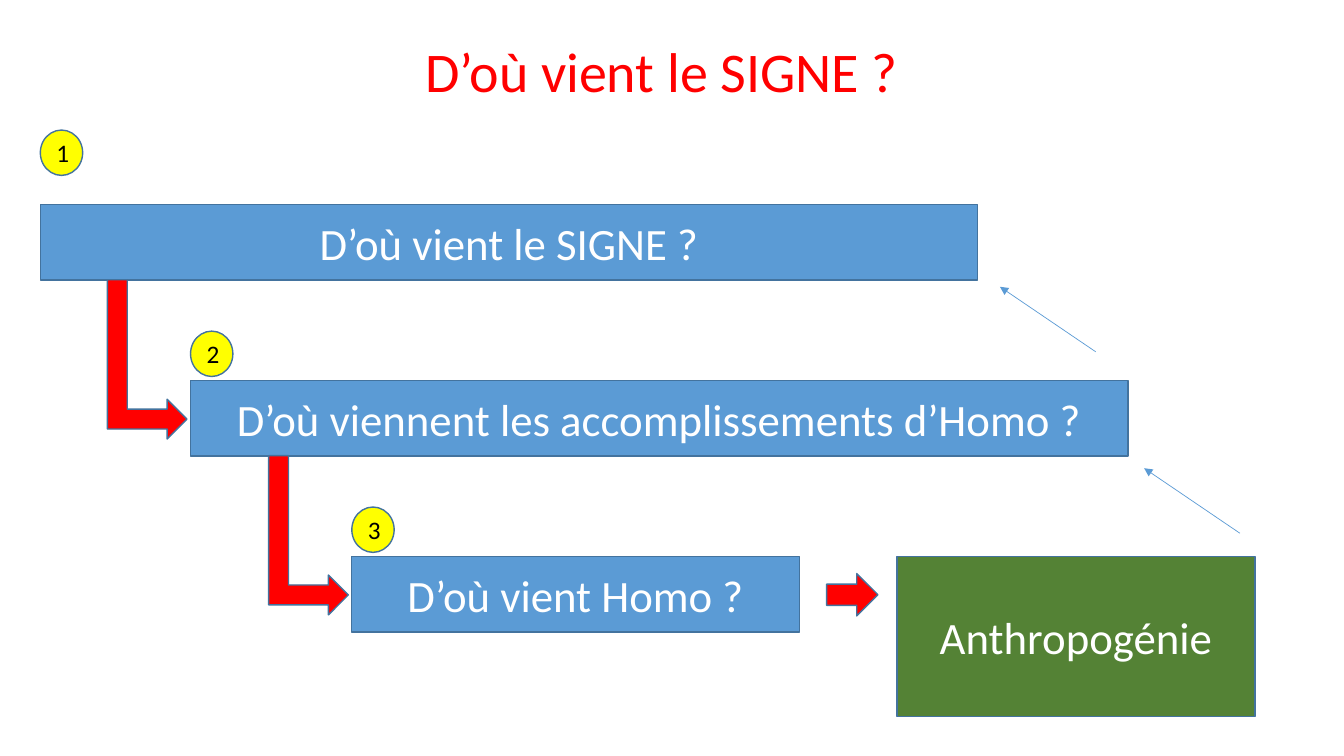
import dataclasses

import pptx
import pptx.dml.color
import pptx.enum.shapes
import pptx.enum.text
import pptx.oxml
import pptx.oxml.ns
import pptx.util

SHAPES = pptx.enum.shapes.MSO_SHAPE
CELLS_PER_INCH = 10
COLUMNS, ROWS = 133.33, 75


@dataclasses.dataclass(frozen=True)
class Theme:
    """Colours and type sizes of the slide."""

    font: str = "Calibri"
    title_size: int = 40
    box_size: int = 32
    badge_size: int = 18
    red: str = "FF0000"
    blue: str = "5B9BD5"
    green: str = "548235"
    yellow: str = "FFFF00"
    outline: str = "43739E"
    white: str = "FFFFFF"
    black: str = "000000"
    outline_width: float = 1
    return_width: float = 0.5


THEME = Theme()


def cells(count):
    """Convert grid cells to a length."""
    return pptx.util.Inches(count / CELLS_PER_INCH)


def color(value):
    """Return the colour object for a hexadecimal value."""
    return pptx.dml.color.RGBColor.from_string(value)


def write(text_frame, text, size, text_color):
    """Put one formatted line into a text frame."""
    text_frame.text = text
    font = text_frame.paragraphs[0].runs[0].font
    font.name = THEME.font
    font.size = pptx.util.Pt(size)
    font.color.rgb = color(text_color)


def add_title(slide, text, column, row, width, height):
    """Add the title on a single line."""
    text_box = slide.shapes.add_textbox(*map(cells, (column, row, width, height)))
    text_box.text_frame.word_wrap = False
    text_box.text_frame.auto_size = pptx.enum.text.MSO_AUTO_SIZE.SHAPE_TO_FIT_TEXT
    write(text_box.text_frame, text, THEME.title_size, THEME.red)


def add_block(slide, kind, column, row, width, height, fill):
    """Add a filled and outlined preset shape."""
    shape = slide.shapes.add_shape(kind, *map(cells, (column, row, width, height)))
    shape.shadow.inherit = False
    shape.fill.solid()
    shape.fill.fore_color.rgb = color(fill)
    shape.line.color.rgb = color(THEME.outline)
    shape.line.width = pptx.util.Pt(THEME.outline_width)
    return shape


def add_label(shape, text, size, text_color):
    """Centre a label inside a shape."""
    text_frame = shape.text_frame
    text_frame.word_wrap = True
    text_frame.vertical_anchor = pptx.enum.text.MSO_ANCHOR.MIDDLE
    write(text_frame, text, size, text_color)
    text_frame.paragraphs[0].alignment = pptx.enum.text.PP_ALIGN.CENTER


def add_box(slide, text, column, row, width, height, fill):
    """Add a rectangle holding a question or its answer."""
    box = add_block(slide, SHAPES.RECTANGLE, column, row, width, height, fill)
    add_label(box, text, THEME.box_size, THEME.white)


def add_badge(slide, number, column, row):
    """Add a numbered round badge."""
    badge = add_block(slide, SHAPES.OVAL, column, row, 4.2, 4.5, THEME.yellow)
    add_label(badge, str(number), THEME.badge_size, THEME.black)


def add_elbow(slide, box_column, box_row):
    """Add a bent arrow leading down into a box."""
    elbow = add_block(slide, SHAPES.BENT_UP_ARROW, box_column - 12.2,
                      box_row - 6.05, 15.8, 7.9, THEME.red)
    elbow.rotation = 90


def add_return(slide, column, row):
    """Add a thin arrow pointing back up to the left."""
    line = slide.shapes.add_connector(
        pptx.enum.shapes.MSO_CONNECTOR.STRAIGHT,
        *map(cells, (column, row, column - 9.5, row - 6.45)))
    line.line.color.rgb = color(THEME.blue)
    line.line.width = pptx.util.Pt(THEME.return_width)
    namespace = pptx.oxml.ns.nsdecls("a")
    line.line._get_or_add_ln().append(
        pptx.oxml.parse_xml(f'<a:tailEnd {namespace} type="triangle"/>'))
    line._element.spPr.append(pptx.oxml.parse_xml(f"<a:effectLst {namespace}/>"))


def main():
    """Build the slide and save it."""
    presentation = pptx.Presentation()
    presentation.slide_width = cells(COLUMNS)
    presentation.slide_height = cells(ROWS)
    slide = presentation.slides.add_slide(presentation.slide_layouts[6])

    add_title(slide, "D’où vient le SIGNE ?", 41.2, 3.1, 51.1, 7.7)

    questions = (
        ("D’où vient le SIGNE ?", 4, 93, 7.4),
        ("D’où viennent les accomplissements d’Homo ?", 18.9, 93, 4.9),
        ("D’où vient Homo ?", 34.9, 44.4, 4.9),
    )
    first_row, row_step = 20.3, 17.45
    for index, (text, column, width, badge_rise) in enumerate(questions):
        row = first_row + index * row_step
        add_box(slide, text, column, row, width, 7.5, THEME.blue)
        add_badge(slide, index + 1, column, row - badge_rise)
        if index > 0:
            add_elbow(slide, column, row)

    answer_row = first_row + 2 * row_step
    add_box(slide, "Anthropogénie", 89, answer_row, 35.5, 15.9, THEME.green)
    add_block(slide, SHAPES.RIGHT_ARROW, 82, answer_row + 1.7, 5.1, 4.2, THEME.red)

    for column, row in ((123, 52.9), (108.7, 34.9)):
        add_return(slide, column, row)

    presentation.save("out.pptx")


if __name__ == "__main__":
    main()
